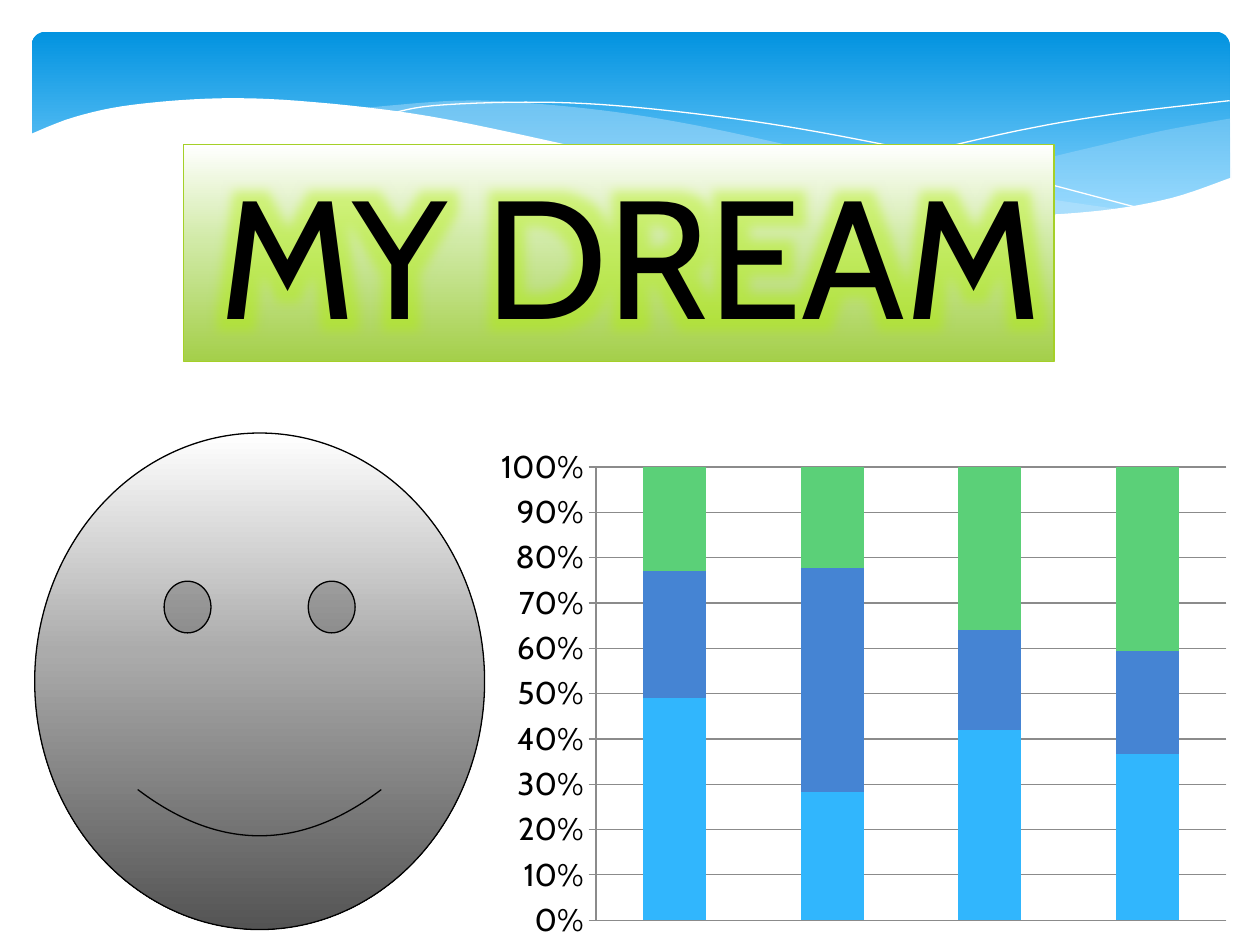
"""Build the "MY DREAM" slide with a wave header, a smiley and a stacked chart."""
from lxml import etree
from pptx import Presentation
from pptx import util as u
from pptx.chart.data import CategoryChartData
from pptx.dml.color import RGBColor
from pptx.enum import chart as charts, shapes, text
from pptx.oxml.ns import qn

TITLE = "MY DREAM"
FONT = "Cabin"
COLORS = {
    "black": "000000", "white": "FFFFFF", "mist": "C6E7FC", "lime": "A5D028",
    "glow": "B0F000", "grid": "8B8B8B",
}
GRADIENTS = {
    "header": [(0, "0293E0"), (90, "83D3FE")],
    "smiley": [(0, "FFFFFF"), (44, "ABABAB"), (100, "545454")],
    "title": [(0, "FFFFFF"), (44, "D1EAA7"), (100, "A4CF4A")],
}
BOXES = {
    "header": (0.64, 0.64, 24.15, 3.96),
    "chart": (9.3, 9.02, 19.4, 9.93),
    "smiley": (0.7, 8.73, 9.07, 10.01),
    "title": (3.7, 2.92, 17.55, 4.37),
}
CATEGORIES = ["1", "2", "3", "4"]
SERIES = [
    ("Series 1", (49, 28, 42, 37), "31B6FD"),
    ("Series 2", (28, 49, 22, 23), "4584D3"),
    ("Series 3", (23, 22, 36, 41), "5BD078"),
]
PLOT = {"x": 0.14, "y": 0.04, "w": 0.655, "h": 0.92}
WAVES = [
    {"fill": "mist", "alpha": 29, "edges": [
        [(24.8, 2.39), (23.42, 2.64), (21.89, 3), (19.81, 3.48), (16.81, 4.06)],
        [(16.81, 4.06), (18.62, 4.29), (20.42, 4.37), (22.17, 4.29),
         (23.6, 4.01), (24.82, 3.61)]]},
    {"fill": "mist", "alpha": 40, "edges": [
        [(22.71, 4.24), (20.52, 3.91), (17.96, 3.4), (16, 2.95), (14.1, 2.54),
         (12.42, 2.26), (10.67, 2.08), (9.19, 2.03), (7.29, 2.18)],
        [(7.29, 2.18), (8.71, 2.39), (11.43, 2.95), (14.4, 3.63), (16.54, 4.01),
         (18.36, 4.27), (20.52, 4.39), (22.71, 4.24)]]},
    {"line": "white", "edges": [
        [(7.87, 2.29), (8.74, 2.13), (10.59, 2.06), (12.42, 2.13), (14.78, 2.39),
         (16.92, 2.74), (19.33, 3.25), (23.06, 4.22)]]},
    {"line": "white", "edges": [
        [(15.6, 3.84), (18.31, 3.15), (20.5, 2.64), (22.4, 2.31), (24.79, 2.03)]]},
    {"fill": "white", "alpha": 100, "edges": [
        [(24.82, 3.58), (23.62, 3.99), (22.23, 4.24), (20.55, 4.34), (18.44, 4.24),
         (16.46, 3.99), (14.1, 3.53), (11.35, 2.9), (8.64, 2.34), (6.35, 2.06),
         (4.5, 1.98), (2.69, 2.11), (1.5, 2.36), (0.58, 2.72)],
        [(0.58, 5.69), (24.82, 5.69)]]},
]


def rgb(name):
    return RGBColor.from_string(COLORS.get(name, name))


def place(name):
    return [u.Cm(length) for length in BOXES[name]]


def add_color(parent, color, alpha):
    node = etree.SubElement(parent, qn("a:srgbClr"), val=color)
    etree.SubElement(node, qn("a:alpha"), val=str(alpha * 1000))


def paint_gradient(shape, name):
    shape.fill.gradient()
    shape.fill.gradient_angle = 270
    stops = shape._element.spPr.find(".//" + qn("a:gsLst"))
    for stop in list(stops):
        stops.remove(stop)
    for position, color in GRADIENTS[name]:
        stop = etree.SubElement(stops, qn("a:gs"), pos=str(position * 1000))
        add_color(stop, color, 100)


def outline(shape, color, width=0.75):
    shape.line.color.rgb = rgb(color)
    shape.line.width = u.Pt(width)


def smooth(points, steps=6):
    """Return points along a Catmull-Rom curve through the given ones."""
    padded = [points[0], *points, points[-1]]
    curve = [points[0]]
    for a, b, c, d in zip(padded, padded[1:], padded[2:], padded[3:]):
        for step in range(1, steps + 1):
            t = step / steps
            curve.append(tuple(
                (2 * q + (r - p) * t + (2 * p - 5 * q + 4 * r - s) * t ** 2
                 + (3 * q - p - 3 * r + s) * t ** 3) / 2
                for p, q, r, s in zip(a, b, c, d)))
    return curve


def add_wave(page, wave):
    points = [(u.Cm(x), u.Cm(y)) for edge in wave["edges"] for x, y in smooth(edge)]
    builder = page.shapes.build_freeform(*points[0])
    builder.add_line_segments(points[1:], close="fill" in wave)
    shape = builder.convert_to_shape()
    shape.shadow.inherit = False
    if "fill" in wave:
        shape.fill.solid()
        shape.fill.fore_color.rgb = rgb(wave["fill"])
        color = shape._element.spPr.find(".//" + qn("a:srgbClr"))
        etree.SubElement(color, qn("a:alpha"), val=str(wave["alpha"] * 1000))
        shape.line.fill.background()
    else:
        shape.fill.background()
        outline(shape, wave["line"], 0)


def add_preset(page, kind, name):
    shape = page.shapes.add_shape(kind, *place(name))
    shape.shadow.inherit = False
    paint_gradient(shape, name)
    return shape


def add_stacked_chart(page):
    data = CategoryChartData()
    data.categories = CATEGORIES
    for name, values, _ in SERIES:
        data.add_series(name, values)
    kind = charts.XL_CHART_TYPE.COLUMN_STACKED_100
    chart = page.shapes.add_chart(kind, *place("chart"), data).chart
    chart.has_legend = chart.has_title = False
    chart.font.name = FONT
    chart.font.size = u.Pt(18)
    chart.font.color.rgb = rgb("black")
    plot = chart.plots[0]
    plot.gap_width, plot.overlap, plot.vary_by_categories = 150, 100, False
    for series, (_, _, color) in zip(plot.series, SERIES):
        series.format.fill.solid()
        series.format.fill.fore_color.rgb = rgb(color)
    chart.category_axis.visible = False
    axis = chart.value_axis
    axis.minimum_scale, axis.maximum_scale, axis.major_unit = 0, 1, 0.1
    axis.major_tick_mark = charts.XL_TICK_MARK.OUTSIDE
    axis.tick_labels.number_format = "0%"
    axis.tick_labels.number_format_is_linked = False
    axis.has_major_gridlines = True
    for part in (axis, axis.major_gridlines):
        part.format.line.color.rgb = rgb("grid")
        part.format.line.width = u.Pt(0.75)
    area = chart._chartSpace.chart.plotArea
    for old in area.findall(qn("c:layout")):
        area.remove(old)
    layout = etree.Element(qn("c:layout"))
    manual = etree.SubElement(layout, qn("c:manualLayout"))
    settings = {"layoutTarget": "inner", "xMode": "edge", "yMode": "edge", **PLOT}
    for tag, value in settings.items():
        etree.SubElement(manual, qn("c:" + tag), val=str(value))
    area.insert(0, layout)


def format_title(page):
    box = page.shapes.title
    box.left, box.top, box.width, box.height = place("title")
    paint_gradient(box, "title")
    outline(box, "lime")
    frame = box.text_frame
    frame.word_wrap = True
    frame.auto_size = text.MSO_AUTO_SIZE.NONE
    frame.vertical_anchor = text.MSO_ANCHOR.TOP
    para = frame.paragraphs[0]
    para.alignment = text.PP_ALIGN.RIGHT
    span = para.add_run()
    span.text = TITLE
    span.font.size = u.Pt(96)
    span.font.color.rgb = rgb("black")
    effects = etree.Element(qn("a:effectLst"))
    glow = etree.SubElement(effects, qn("a:glow"), rad=str(u.Pt(18)))
    add_color(glow, COLORS["glow"], 40)
    span.font._element.find(qn("a:solidFill")).addnext(effects)
    span.font.name = FONT
    page.shapes._spTree.append(box._element)


def main():
    deck = Presentation()
    deck.slide_width, deck.slide_height = u.Cm(25.4), u.Cm(19.05)
    page = deck.slides.add_slide(deck.slide_layouts[5])
    header = add_preset(page, shapes.MSO_SHAPE.ROUNDED_RECTANGLE, "header")
    header.adjustments[0] = 0.07
    header.line.fill.background()
    for wave in WAVES:
        add_wave(page, wave)
    add_stacked_chart(page)
    outline(add_preset(page, shapes.MSO_SHAPE.SMILEY_FACE, "smiley"), "black")
    format_title(page)
    deck.save("out.pptx")


if __name__ == "__main__":
    main()
